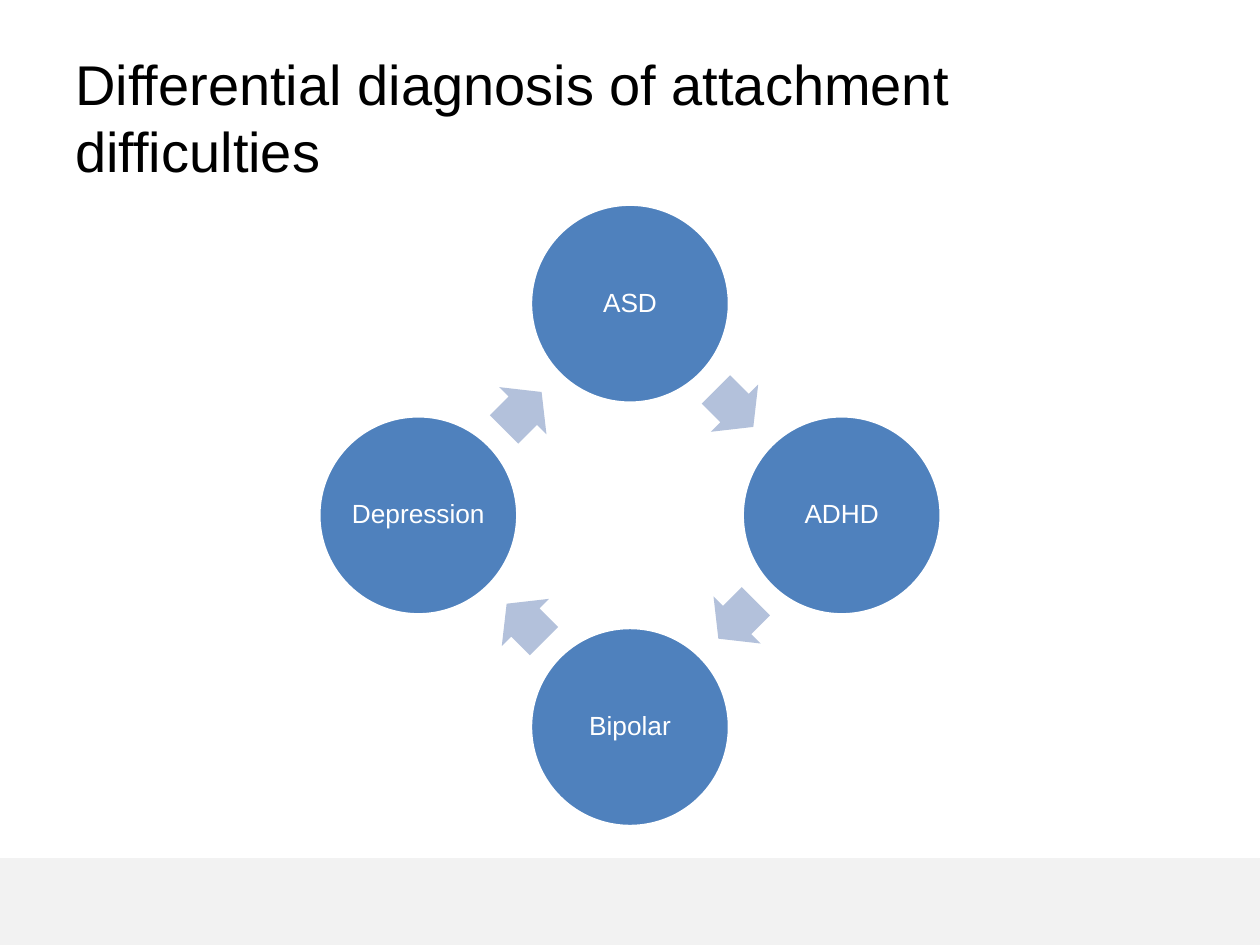
from pptx import Presentation, util as u
from pptx.dml.color import RGBColor
from pptx.enum import shapes, text

WHITE = RGBColor(0xFF, 0xFF, 0xFF)
BLACK = RGBColor(0, 0, 0)
BAND = RGBColor(0xF2, 0xF2, 0xF2)
BLUE = RGBColor(0x4F, 0x81, 0xBD)
PALE_BLUE = RGBColor(0xB3, 0xC1, 0xDB)

WIDTH, HEIGHT = 10, 7.5
CENTRE_X, CENTRE_Y = WIDTH / 2, 4.09
RING_RADIUS = 1.68
DIAMETER = 1.58
LABEL_SIZE = 1.12
ARROW_W, ARROW_H = 0.42, 0.53
CONDITIONS = ["ASD", "ADHD", "Bipolar", "Depression"]


def quarter_turns(x, y, turns):
    """Turn an offset clockwise about the ring's centre."""
    for _ in range(turns):
        x, y = -y, x
    return x, y


def centred(dx, dy, w, h):
    """Box of the given size, centred at an offset from the ring's centre."""
    left, top = CENTRE_X + dx - w / 2, CENTRE_Y + dy - h / 2
    return [u.Inches(v) for v in (left, top, w, h)]


def add_filled(s, kind, box, colour):
    sp = s.shapes.add_shape(kind, *box)
    sp.shadow.inherit = False
    sp.fill.solid()
    sp.fill.fore_color.rgb = colour
    sp.line.fill.background()
    return sp


def add_text(s, box, wording, size, colour, inset=None):
    tf = s.shapes.add_textbox(*box).text_frame
    tf.word_wrap = True
    tf.vertical_anchor = text.MSO_ANCHOR.MIDDLE
    if inset is not None:
        tf.margin_left = tf.margin_right = u.Inches(inset)
        tf.margin_top = tf.margin_bottom = u.Inches(inset)
    tf.text = wording
    p = tf.paragraphs[0]
    font = p.runs[0].font
    font.name, font.size = "Arial", u.Pt(size)
    font.color.rgb = colour
    return p


def add_condition(s, wording, turns):
    dx, dy = quarter_turns(0, -RING_RADIUS, turns)
    sp = add_filled(s, shapes.MSO_SHAPE.OVAL,
                    centred(dx, dy, DIAMETER, DIAMETER), BLUE)
    sp.line.color.rgb = WHITE
    sp.line.width = u.Pt(2)
    p = add_text(s, centred(dx, dy, LABEL_SIZE, LABEL_SIZE),
                 wording, 15, WHITE, inset=0.02)
    p.alignment = text.PP_ALIGN.CENTER
    p.line_spacing = 0.9


def add_arrow(s, turns):
    dx, dy = quarter_turns(0.83, -0.85, turns)
    sp = add_filled(s, shapes.MSO_SHAPE.RIGHT_ARROW,
                    centred(dx, dy, ARROW_W, ARROW_H), PALE_BLUE)
    sp.adjustments[0], sp.adjustments[1] = 0.6, 0.5
    sp.rotation = 45 + 90 * turns


def main():
    prs = Presentation()
    prs.slide_width, prs.slide_height = u.Inches(WIDTH), u.Inches(HEIGHT)
    s = prs.slides.add_slide(prs.slide_layouts[6])
    band = [u.Inches(v) for v in (0, 6.81, WIDTH, HEIGHT - 6.81)]
    add_filled(s, shapes.MSO_SHAPE.RECTANGLE, band, BAND)
    for turns, wording in enumerate(CONDITIONS):
        add_condition(s, wording, turns)
        add_arrow(s, turns)
    title = [u.Inches(v) for v in (0.5, 0.3, 9, 1.25)]
    add_text(s, title, "Differential diagnosis of attachment difficulties",
             32, BLACK)
    prs.save("out.pptx")


if __name__ == "__main__":
    main()
